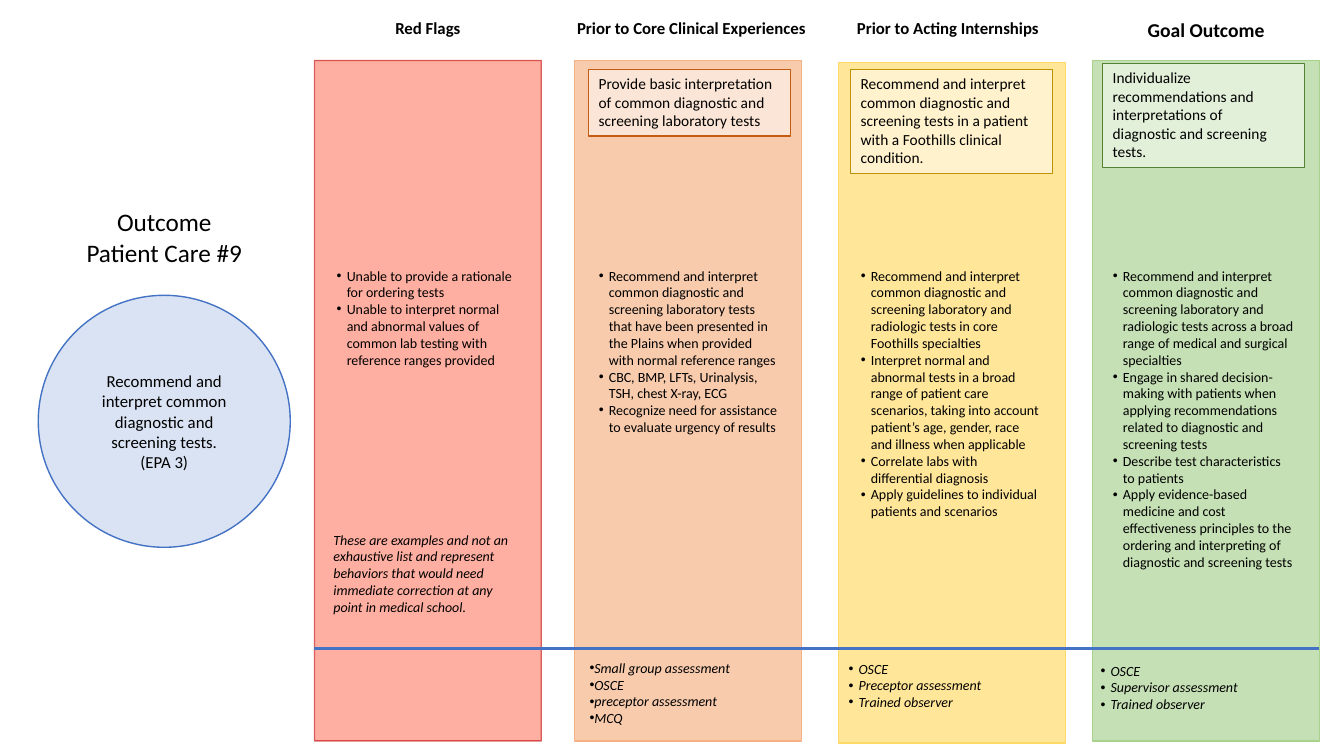
"""Build the Patient Care #9 outcome slide with its four milestone columns."""
from lxml import etree
from pptx import Presentation
from pptx.dml.color import RGBColor
from pptx.enum.shapes import MSO_CONNECTOR, MSO_SHAPE
from pptx.enum.text import MSO_ANCHOR, MSO_AUTO_SIZE, PP_ALIGN
from pptx.oxml.ns import qn
from pptx.util import Pt

RECTANGLE, ELLIPSE = MSO_SHAPE.RECTANGLE, MSO_SHAPE.OVAL
STRAIGHT = MSO_CONNECTOR.STRAIGHT
TOP, MIDDLE = MSO_ANCHOR.TOP, MSO_ANCHOR.MIDDLE
LEFT, CENTER = PP_ALIGN.LEFT, PP_ALIGN.CENTER
NO_AUTO_SIZE = MSO_AUTO_SIZE.NONE

BLACK = RGBColor(0x00, 0x00, 0x00)
BLUE = RGBColor(0x44, 0x72, 0xC4)
PALE_BLUE = RGBColor(0xDA, 0xE3, 0xF3)
RED = RGBColor(0xFF, 0x26, 0x00)
DARK_RED = RGBColor(0xC0, 0x00, 0x00)
ORANGE = RGBColor(0xF8, 0xCB, 0xAD)
ORANGE_EDGE = RGBColor(0xF4, 0xB1, 0x83)
PALE_ORANGE = RGBColor(0xFB, 0xE5, 0xD6)
DARK_ORANGE = RGBColor(0xC5, 0x5A, 0x11)
YELLOW = RGBColor(0xFF, 0xE6, 0x99)
YELLOW_EDGE = RGBColor(0xFF, 0xD9, 0x66)
PALE_YELLOW = RGBColor(0xFF, 0xF2, 0xCC)
DARK_YELLOW = RGBColor(0xBF, 0x90, 0x00)
GREEN = RGBColor(0xC5, 0xE0, 0xB4)
GREEN_EDGE = RGBColor(0xA9, 0xD1, 0x8E)
PALE_GREEN = RGBColor(0xE2, 0xF0, 0xD9)
DARK_GREEN = RGBColor(0x54, 0x82, 0x35)

COLUMN_WIDTH, COLUMN_HEIGHT = 162, 486
LIST_TOP, LIST_WIDTH = 187.2, 144
HANGING = 7.2

COLUMNS = [
    dict(left=224.64, top=43.2, fill=RED, edge=DARK_RED,
         heading="Red Flags", heading_box=(224.64, 162), heading_size=12,
         list_left=233.28, list_height=92,
         behaviors=["Unable to provide a rationale for ordering tests",
                    "Unable to interpret normal and abnormal values of common lab "
                    "testing with reference ranges provided"]),
    dict(left=410.4, top=43.2, fill=ORANGE, edge=ORANGE_EDGE,
         heading="Prior to Core Clinical Experiences", heading_box=(403.2, 181.44),
         heading_size=12, list_left=420.48, list_height=140,
         behaviors=["Recommend and interpret common diagnostic and screening laboratory "
                    "tests that have been presented in the Plains when provided with "
                    "normal reference ranges",
                    "CBC, BMP, LFTs, Urinalysis, TSH, chest X-ray, ECG",
                    "Recognize need for assistance to evaluate urgency of results"],
         callout=["Provide basic interpretation of common diagnostic and "
                  "screening laboratory tests"],
         callout_box=(49.68, 47.5), callout_colors=(PALE_ORANGE, DARK_ORANGE),
         assessments=["Small group assessment", "OSCE", "preceptor assessment", "MCQ"],
         assessment_box=(414, 467.28, 150.5), assessment_indent=0),
    dict(left=599.04, top=44.64, fill=YELLOW, edge=YELLOW_EDGE,
         heading="Prior to Acting Internships", heading_box=(596.16, 162),
         heading_size=12, list_left=607.68, list_height=189,
         behaviors=["Recommend and interpret common diagnostic and screening laboratory "
                    "and radiologic tests in core Foothills specialties",
                    "Interpret normal and abnormal tests in a broad range of patient care "
                    "scenarios, taking into account patient’s age, gender, race and "
                    "illness when applicable",
                    "Correlate labs with differential diagnosis",
                    "Apply guidelines to individual patients and scenarios"],
         callout=["Recommend and interpret common diagnostic and screening tests in a "
                  "patient with a Foothills clinical condition."],
         callout_box=(49.68, 74.16), callout_colors=(PALE_YELLOW, DARK_YELLOW),
         assessments=["OSCE", "Preceptor assessment", "Trained observer"],
         assessment_box=(599.04, 468, 116), assessment_indent=HANGING),
    dict(left=780.48, top=43.2, fill=GREEN, edge=GREEN_EDGE,
         heading="Goal Outcome", heading_box=(780.48, 162), heading_size=14,
         list_left=787.68, list_height=225,
         behaviors=["Recommend and interpret common diagnostic and screening laboratory "
                    "and radiologic tests across a broad range of medical and "
                    "surgical specialties",
                    "Engage in shared decision-making with patients when applying "
                    "recommendations related to diagnostic and screening tests",
                    "Describe test characteristics to patients",
                    "Apply evidence-based medicine and cost effectiveness principles to "
                    "the ordering and interpreting of diagnostic and screening tests"],
         callout=["Individualize recommendations and interpretations of",
                  "diagnostic and screening tests."],
         callout_box=(45.36, 74.16), callout_colors=(PALE_GREEN, DARK_GREEN),
         assessments=["OSCE", "Supervisor assessment", "Trained observer"],
         assessment_box=(779.04, 469.44, 116), assessment_indent=HANGING),
]


def write_text(shape, lines, size, alignment=LEFT, bold=False, italic=False,
               indent=None, anchor=TOP):
    frame = shape.text_frame
    frame.word_wrap = True
    frame.auto_size = NO_AUTO_SIZE
    frame.vertical_anchor = anchor
    frame.text = "\n".join(lines)
    for paragraph in frame.paragraphs:
        paragraph.alignment = alignment
        paragraph.space_before = Pt(0)
        if indent is not None:
            properties = paragraph._p.get_or_add_pPr()
            properties.set("marL", str(Pt(indent)))
            properties.set("indent", str(-Pt(indent)))
            etree.SubElement(properties, qn("a:buFont")).set("typeface", "Arial")
            etree.SubElement(properties, qn("a:buChar")).set("char", "•")
        font = paragraph.font
        font.name, font.size, font.bold, font.italic = "Calibri", Pt(size), bold, italic
        font.color.rgb = BLACK


def add_panel(kind, left, top, width, height, fill, edge, edge_width=1):
    shape = slide.shapes.add_shape(kind, Pt(left), Pt(top), Pt(width), Pt(height))
    shape.shadow.inherit = False
    shape.fill.solid()
    shape.fill.fore_color.rgb = fill
    shape.line.color.rgb = edge
    shape.line.width = Pt(edge_width)
    return shape


presentation = Presentation()
presentation.slide_width, presentation.slide_height = Pt(960), Pt(540)
slide = presentation.slides.add_slide(
    presentation.slide_layouts.get_by_name("Comparison"))

title, *list_placeholders = slide.placeholders
title.left, title.top, title.width, title.height = Pt(34.56), Pt(144), Pt(165.6), Pt(51)
write_text(title, ["Outcome", "Patient Care #9"], 18, CENTER)

circle = add_panel(ELLIPSE, 27.36, 210.96, 180, 180, PALE_BLUE, BLUE)
write_text(circle, ["Recommend and interpret common diagnostic and screening tests.",
                    "(EPA 3)"], 12, CENTER, anchor=MIDDLE)

for column, behaviors in zip(COLUMNS, list_placeholders):
    panel = add_panel(RECTANGLE, column["left"], column["top"], COLUMN_WIDTH,
                      COLUMN_HEIGHT, column["fill"], column["edge"])
    if column["fill"] == RED:
        for color, opacity in zip(panel.element.spPr.iter(qn("a:srgbClr")), (37, 59)):
            etree.SubElement(color, qn("a:alpha")).set("val", str(opacity * 1000))

    heading_left, heading_width = column["heading_box"]
    heading = slide.shapes.add_textbox(Pt(heading_left), Pt(9.36), Pt(heading_width), Pt(22))
    write_text(heading, [column["heading"]], column["heading_size"], CENTER, bold=True)

    behaviors.left, behaviors.top = Pt(column["list_left"]), Pt(LIST_TOP)
    behaviors.width, behaviors.height = Pt(LIST_WIDTH), Pt(column["list_height"])
    write_text(behaviors, column["behaviors"], 10, indent=HANGING)
    panel.element.addnext(behaviors.element)

    if "callout" in column:
        callout_top, callout_height = column["callout_box"]
        callout = add_panel(RECTANGLE, column["list_left"], callout_top, LIST_WIDTH,
                            callout_height, *column["callout_colors"], 0.75)
        write_text(callout, column["callout"], 11)

        left, top, width = column["assessment_box"]
        height = 7.2 + 12 * len(column["assessments"])
        assessments = slide.shapes.add_textbox(Pt(left), Pt(top), Pt(width), Pt(height))
        write_text(assessments, column["assessments"], 10, italic=True,
                   indent=column["assessment_indent"])

note = slide.shapes.add_textbox(Pt(231.12), Pt(375.84), Pt(LIST_WIDTH), Pt(80))
write_text(note, ["These are examples and not an exhaustive list and represent behaviors "
                  "that would need immediate correction at any point in medical school."],
           10, italic=True)

divider = slide.shapes.add_connector(STRAIGHT, Pt(224.64), Pt(462.96), Pt(942.48), Pt(462.96))
divider.line.color.rgb = BLUE
divider.line.width = Pt(2.25)
etree.SubElement(divider.element.spPr, qn("a:effectLst"))

presentation.save("out.pptx")
